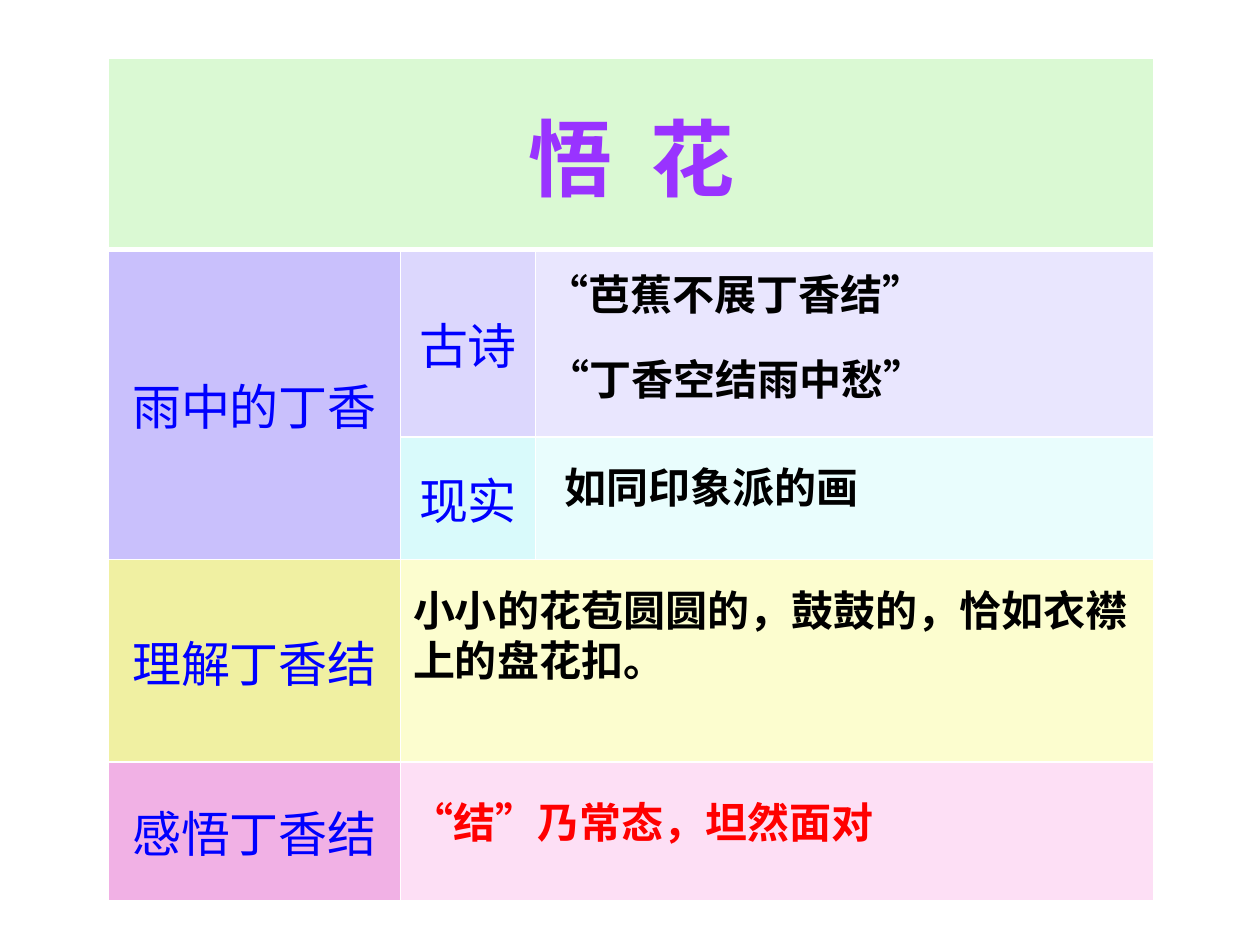
import pptx
import pptx.util
import pptx.dml.color
import pptx.enum.text
from dataclasses import dataclass
from lxml import etree
from pptx.oxml.ns import qn
from pptx.util import Inches


@dataclass(frozen=True)
class Theme:
    font: str = "Noto Sans CJK SC"
    title_size: int = 48
    label_size: int = 28
    note_size: int = 24
    title: str = "9933FF"
    label: str = "0000FF"
    note: str = "000000"
    insight: str = "FF0000"
    border: str = "FFFFFF"


THEME = Theme()
COLUMN_WIDTHS = (2.32, 1.07, 4.91)
ROW_HEIGHTS = (1.52, 1.49, 0.97, 1.61, 1.1)

# Fills by row; None lies under a merged cell
FILLS = (
    ("DAF9D3", None, None),
    ("C9C0FC", "DCD7FD", "E9E6FE"),
    (None, "D9FAFB", "E9FDFD"),
    ("F0F0A2", "FCFDCF", None),
    ("F1B1E5", "FDDFF5", None),
)
# First cell and last cell of each merged area
MERGES = (((0, 0), (0, 2)), ((1, 0), (2, 0)), ((3, 1), (3, 2)), ((4, 1), (4, 2)))
LABELS = {
    (1, 0): "雨中的丁香",
    (1, 1): "古诗",
    (2, 1): "现实",
    (3, 0): "理解丁香结",
    (4, 0): "感悟丁香结",
}
# Left, top, width, height, wording, colour
NOTES = (
    (4.24, 2.08, 3.69, 0.5, "“芭蕉不展丁香结”", THEME.note),
    (4.25, 2.76, 3.76, 0.5, "“丁香空结雨中愁”", THEME.note),
    (4.38, 3.61, 3.53, 0.5, "如同印象派的画", THEME.note),
    (3.18, 4.59, 6, 0.91, "小小的花苞圆圆的，鼓鼓的，恰如衣襟上的盘花扣。", THEME.note),
    (3.17, 6.27, 4.84, 0.5, "“结”乃常态，坦然面对", THEME.insight),
)


def rgb(value):
    return pptx.dml.color.RGBColor.from_string(value)


def write(frame, text, *, size, color, bold=False, align=None, spacing=0):
    paragraph = frame.paragraphs[0]
    paragraph.alignment = align
    run = paragraph.add_run()
    run.text = text
    run.font.size = pptx.util.Pt(size)
    run.font.bold = bold
    run.font.color.rgb = rgb(color)
    run.font.name = THEME.font
    properties = run._r.get_or_add_rPr()
    properties.set("lang", "zh-CN")
    if spacing:
        properties.set("spc", str(round(spacing * 100)))
    etree.SubElement(properties, qn("a:ea"), typeface=THEME.font)


def set_borders(cell, **widths):
    """Draw the left, right, top and bottom lines, 1 pt unless given."""
    properties = cell._tc.get_or_add_tcPr()
    for position, side in enumerate("LRTB"):
        width = pptx.util.Pt(widths.get(side, 1))
        line = etree.Element(qn(f"a:ln{side}"), w=str(int(width)))
        fill = etree.SubElement(line, qn("a:solidFill"))
        etree.SubElement(fill, qn("a:srgbClr"), val=THEME.border)
        properties.insert(position, line)


def write_cell(cell, text, **text_format):
    cell.vertical_anchor = pptx.enum.text.MSO_ANCHOR.MIDDLE
    cell.margin_left = cell.margin_right = Inches(0.07)
    write(cell.text_frame, text, align=pptx.enum.text.PP_ALIGN.CENTER, **text_format)


def add_summary_table(slide):
    summary = slide.shapes.add_table(
        len(ROW_HEIGHTS), len(COLUMN_WIDTHS), Inches(0.86), Inches(0.46),
        Inches(sum(COLUMN_WIDTHS)), Inches(sum(ROW_HEIGHTS)),
    ).table
    for column, width in zip(summary.columns, COLUMN_WIDTHS):
        column.width = Inches(width)
    for row, height in zip(summary.rows, ROW_HEIGHTS):
        row.height = Inches(height)

    # Fills and lines, with a heavier line under the heading
    for row, fills in enumerate(FILLS):
        for column, color in enumerate(fills):
            cell = summary.cell(row, column)
            if color:
                cell.fill.solid()
                cell.fill.fore_color.rgb = rgb(color)
            set_borders(cell, T=3 if row == 1 else 1, B=3 if row == 0 else 1)
    for first, last in MERGES:
        summary.cell(*first).merge(summary.cell(*last))

    # Heading and row labels
    write_cell(summary.cell(0, 0), "悟 花", size=THEME.title_size,
               color=THEME.title, bold=True, spacing=5.4)
    for place, label in LABELS.items():
        write_cell(summary.cell(*place), label, size=THEME.label_size, color=THEME.label)


def add_note(slide, left, top, width, height, text, color):
    frame = slide.shapes.add_textbox(
        Inches(left), Inches(top), Inches(width), Inches(height)).text_frame
    frame.word_wrap = True
    frame.auto_size = pptx.enum.text.MSO_AUTO_SIZE.SHAPE_TO_FIT_TEXT
    write(frame, text, size=THEME.note_size, color=color, bold=True)


def main():
    deck = pptx.Presentation()
    deck.slide_width, deck.slide_height = Inches(10), Inches(7.5)
    slide = deck.slides.add_slide(deck.slide_layouts[6])
    add_summary_table(slide)
    # Notes laid over the right-hand cells
    for note in NOTES:
        add_note(slide, *note)
    deck.save("out.pptx")


if __name__ == "__main__":
    main()
